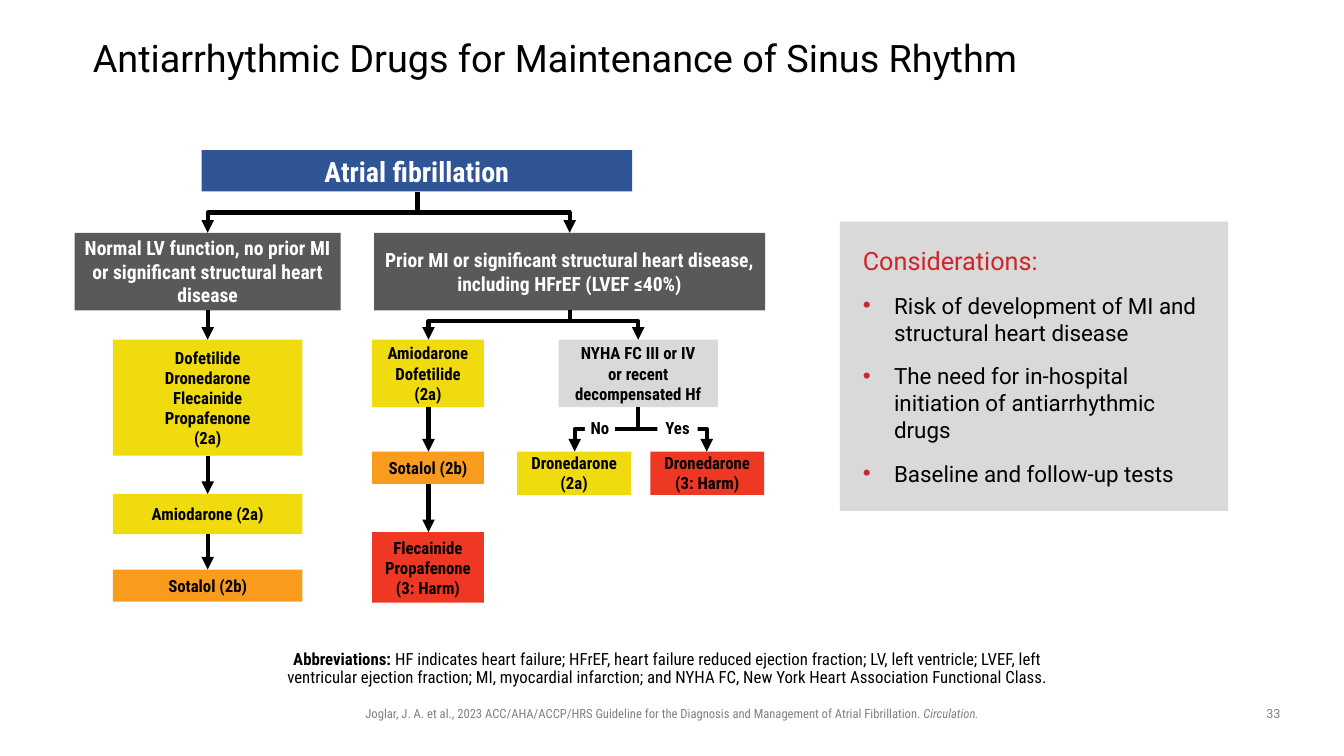
from lxml.etree import SubElement
from pptx import Presentation
from pptx.dml.color import RGBColor
from pptx.enum.shapes import MSO_CONNECTOR, MSO_SHAPE
from pptx.enum.text import MSO_ANCHOR, PP_ALIGN
from pptx.oxml.ns import qn
from pptx.util import Inches, Pt


class Theme:
    black, white, grey = "000000", "FFFFFF", "808080"
    blue, dark, light = "2F5597", "595959", "D9D9D9"
    yellow, orange, red, accent = "F0DB0E", "F99B1D", "EE3823", "CF2429"
    regular, condensed = "Roboto", "Roboto Condensed"
    title, root, heading, bullet = 27, 20, 18, 16
    branch, drug, footer, line = 14, 12, 9, 3


deck = Presentation()
deck.slide_width, deck.slide_height = Inches(13.33), Inches(7.5)
page = deck.slides.add_slide(deck.slide_layouts[6])


def add_box(place, paragraphs, size, font=Theme.condensed, color=Theme.black, fill=None,
            bold=False, align=PP_ALIGN.CENTER, anchor=MSO_ANCHOR.TOP,
            insets=(0.1, 0.05, 0.1, 0.05), spacing=None):
    """Add a filled rectangle, or a text box without fill; a paragraph is a list of (text, font changes)."""
    place = [Inches(value) for value in place]
    if fill:
        box = page.shapes.add_shape(MSO_SHAPE.RECTANGLE, *place)
        box.shadow.inherit = False
        box.fill.solid()
        box.fill.fore_color.rgb = RGBColor.from_string(fill)
        box.line.fill.background()
    else:
        box = page.shapes.add_textbox(*place)
    frame = box.text_frame
    frame.word_wrap, frame.vertical_anchor = True, anchor
    for side, inset in zip(("left", "top", "right", "bottom"), insets):
        setattr(frame, f"margin_{side}", Inches(inset))
    for index, spans in enumerate(paragraphs):
        para = frame.paragraphs[0] if index == 0 else frame.add_paragraph()
        para.alignment, para.line_spacing = align, spacing
        for text, changes in spans:
            span = para.add_run()
            span.text = text
            formats = {"name": font, "size": Pt(size), "bold": bold} | changes
            tone = formats.pop("color", color)
            for name, value in formats.items():
                setattr(span.font, name, value)
            span.font.color.rgb = RGBColor.from_string(tone)
    return box


def add_arrow(x1, y1, x2, y2, bend=0.5):
    """Draw a downward arrow, straight or with a horizontal step at the share bend of its height."""
    if x1 == x2:
        kind, ends = MSO_CONNECTOR.STRAIGHT, (x1, y1, x2, y2)
    else:
        # An elbow runs sideways first, so it is laid out lying down and then turned.
        kind = MSO_CONNECTOR.ELBOW
        middle_x, middle_y = (x1 + x2) / 2, (y1 + y2) / 2
        along = (y2 - y1) / 2 * (1 if x2 < x1 else -1)
        across = abs(x2 - x1) / 2
        ends = (middle_x - along, middle_y - across, middle_x + along, middle_y + across)
    arrow = page.shapes.add_connector(kind, *[Inches(value) for value in ends])
    arrow.line.width = Pt(Theme.line)
    arrow.line.color.rgb = RGBColor.from_string(Theme.black)
    properties = arrow._element.spPr
    SubElement(properties.find(qn("a:ln")), qn("a:tailEnd"), type="triangle")
    SubElement(properties, qn("a:effectLst"))
    if x1 != x2:
        properties.find(qn("a:xfrm")).set("rot", str((90 if x2 < x1 else 270) * 60000))
        adjustments = properties.find(qn("a:prstGeom")).get_or_add_avLst()
        SubElement(adjustments, qn("a:gd"), name="adj1", fmla=f"val {round(bend * 100000)}")


add_box((0.92, 0.4, 10.75, 0.39), [[("Antiarrhythmic Drugs for Maintenance of Sinus Rhythm", {})]],
        Theme.title, Theme.regular, align=PP_ALIGN.LEFT, anchor=MSO_ANCHOR.MIDDLE,
        insets=(0, 0, 0, 0), spacing=0.9)

# Flow chart: place, fill, text colour, type size, lines
left_x, middle_x, nyha_x = 2.06, 4.25, 6.33
nodes = [
    ((2, 1.49, 4.27, 0.41), Theme.blue, Theme.white, Theme.root, ["Atrial fibrillation"]),
    ((0.74, 2.31, 2.64, 0.77), Theme.dark, Theme.white, Theme.branch,
     ["Normal LV function, no prior MI or significant structural heart disease"]),
    ((3.71, 2.31, 3.88, 0.77), Theme.dark, Theme.white, Theme.branch,
     ["Prior MI or significant structural heart disease, including HFrEF (LVEF ≤40%)"]),
    ((1.12, 3.37, 1.88, 1.15), Theme.yellow, Theme.black, Theme.drug,
     ["Dofetilide", "Dronedarone", "Flecainide", "Propafenone", "(2a)"]),
    ((1.12, 4.9, 1.88, 0.4), Theme.yellow, Theme.black, Theme.drug, ["Amiodarone (2a)"]),
    ((1.12, 5.65, 1.88, 0.32), Theme.orange, Theme.black, Theme.drug, ["Sotalol (2b)"]),
    ((3.69, 3.37, 1.11, 0.67), Theme.yellow, Theme.black, Theme.drug,
     ["Amiodarone", "Dofetilide", "(2a)"]),
    ((3.69, 4.48, 1.11, 0.32), Theme.orange, Theme.black, Theme.drug, ["Sotalol (2b)"]),
    ((3.69, 5.28, 1.11, 0.7), Theme.red, Theme.black, Theme.drug,
     ["Flecainide", "Propafenone", "(3: Harm)"]),
    ((5.54, 3.37, 1.58, 0.67), Theme.light, Theme.black, Theme.drug,
     ["NYHA FC III or IV", "or recent decompensated Hf"]),
    ((5.13, 4.48, 1.13, 0.43), Theme.yellow, Theme.black, Theme.drug, ["Dronedarone", "(2a)"]),
    ((6.45, 4.48, 1.13, 0.43), Theme.red, Theme.black, Theme.drug, ["Dronedarone", "(3: Harm)"]),
]
for place, fill, color, size, lines in nodes:
    add_box(place, [[(line, {})] for line in lines], size, color=color, fill=fill,
            bold=True, anchor=MSO_ANCHOR.MIDDLE)

arrows = [
    (4.14, 1.91, left_x, 2.31), (4.14, 1.91, 5.65, 2.31),
    (5.65, 3.08, middle_x, 3.37, 0.37), (5.65, 3.08, nyha_x, 3.37, 0.37),
    (left_x, 3.08, left_x, 3.37), (left_x, 4.52, left_x, 4.9), (left_x, 5.3, left_x, 5.65),
    (middle_x, 4.04, middle_x, 4.48), (middle_x, 4.8, middle_x, 5.28),
    (nyha_x, 4.04, 5.7, 4.48), (nyha_x, 4.04, 7.01, 4.48),
]
for arrow in arrows:
    add_arrow(*arrow)

for answer, place, inset in (("No", (5.8, 4.1, 0.3, 0.3), 0.05), ("Yes", (6.52, 4.14, 0.4, 0.2), 0)):
    add_box(place, [[(answer, {})]], Theme.drug, fill=Theme.white, bold=True,
            insets=(0, inset, 0, inset))

# Considerations panel
add_box((8.33, 2.2, 3.85, 2.87), [], Theme.bullet, fill=Theme.light)
considerations = add_box((8.46, 2.38, 3.63, 2.52), [
    [("Considerations:", {"size": Pt(Theme.heading), "color": Theme.accent})],
    [("Risk of development of MI and structural heart disease", {})],
    [("The need for in-hospital initiation of antiarrhythmic drugs", {})],
    [("Baseline and follow-up tests", {})],
], Theme.bullet, Theme.regular, align=PP_ALIGN.LEFT)
for index, para in enumerate(considerations.text_frame.paragraphs):
    para.space_after = Pt(12)
    if index > 0:
        bullet = para._p.get_or_add_pPr()
        bullet.set("marL", str(Inches(0.31)))
        bullet.set("indent", str(Inches(-0.31)))
        SubElement(SubElement(bullet, qn("a:buClr")), qn("a:srgbClr"), val=Theme.accent)
        SubElement(bullet, qn("a:buFont"), typeface="Arial")
        SubElement(bullet, qn("a:buChar"), char="•")

# Notes at the foot
add_box((2.56, 6.41, 8.22, 0.37), [[
    ("Abbreviations: ", {"bold": True}),
    ("HF indicates heart failure; HFrEF, heart failure reduced ejection fraction; LV, left ventricle; "
     "LVEF, left ventricular ejection fraction; MI, myocardial infarction; and NYHA FC, "
     "New York Heart Association Functional Class.", {}),
]], Theme.drug, insets=(0, 0.05, 0.1, 0.05), spacing=0.9)
add_box((2.94, 6.95, 7.45, 0.25), [[
    ("Joglar, J. A. et al., 2023 ACC/AHA/ACCP/HRS Guideline for the Diagnosis and Management "
     "of Atrial Fibrillation. ", {}),
    ("Circulation.", {"italic": True}),
]], Theme.footer, color=Theme.grey)
add_box((12.42, 6.95, 0.42, 0.26), [[("33", {})]], Theme.footer, Theme.regular, Theme.grey)

deck.save("out.pptx")
